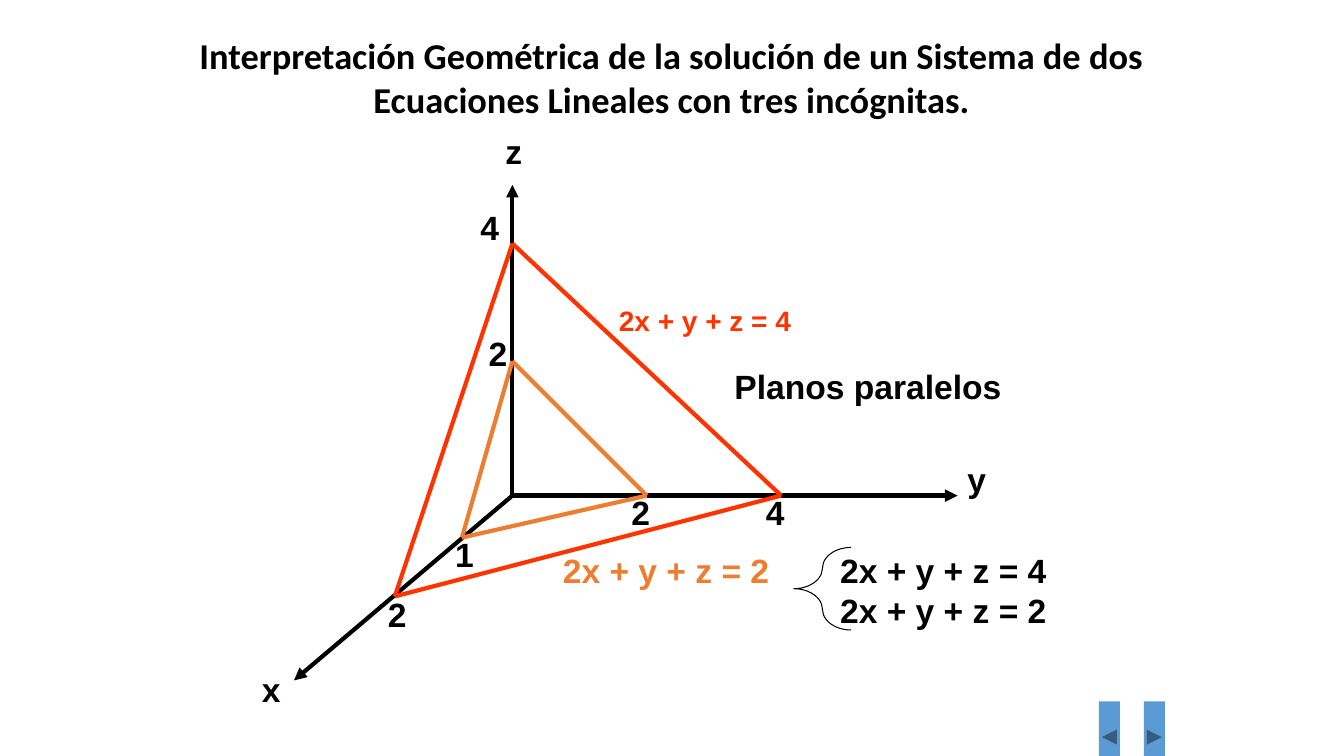
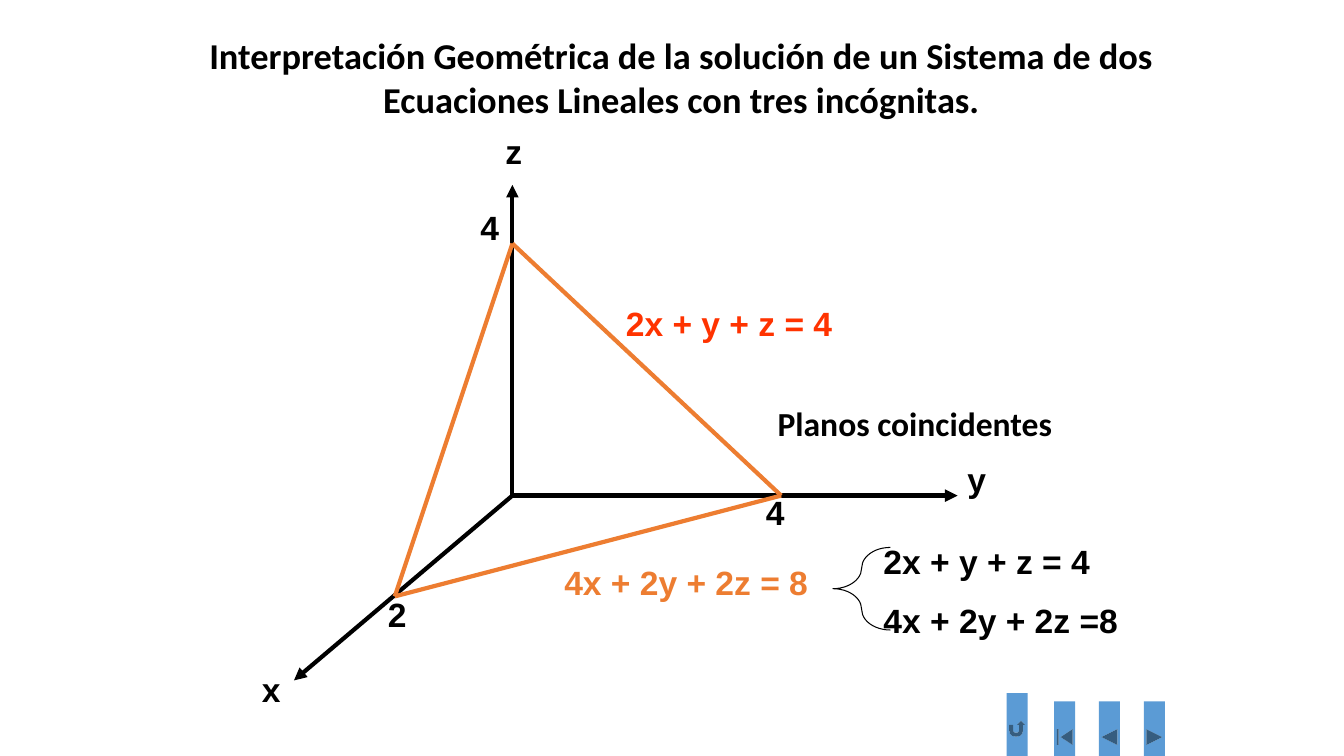
from pptx import Presentation
from pptx import util as u
from pptx.dml import color
from pptx.enum import shapes, text
from pptx.oxml.ns import qn
from lxml import etree

Pt = u.Pt
Kind = shapes.MSO_SHAPE
BLACK, RED, ORANGE, BLUE = "000000", "FF3300", "ED7D31", "5B9BD5"
LEFT, MID = text.PP_ALIGN.LEFT, text.PP_ALIGN.CENTER

TITLE = ("Interpretación Geométrica de la solución de un Sistema de dos "
         "Ecuaciones Lineales con tres incógnitas.")
ORIGIN = (366, 354)
AXES = [
    ("z", (366, 132), (354, 90)),
    ("y", (684, 354), (684, 324)),
    ("x", (210, 486), (180, 474)),
]
BIG = {
    "ends": [(366, 174), (558, 354), (282, 426)],
    "marks": [("4", (336, 144)), ("4", (540, 348)), ("2", (270, 421))],
}
SMALL = {
    "ends": [(366, 258), (462, 354), (330, 384)],
    "marks": [("2", (342, 234)), ("2", (444, 348)), ("1", (318, 378))],
}
NEXT = (Kind.ACTION_BUTTON_FORWARD_OR_NEXT, 817, 501)
BACK = (Kind.ACTION_BUTTON_BACK_OR_PREVIOUS, 785, 501)
FIRST = (Kind.ACTION_BUTTON_BEGINNING, 753, 501)
RETURN = (Kind.ACTION_BUTTON_RETURN, 719, 495)

SLIDES = [
    {
        "title": (120, 20, 720, 70),
        "planes": [(BIG, RED), (SMALL, ORANGE)],
        "notes": [
            (["2x + y + z = 4"], (435, 213, 228, 31), {"size": 20, "hue": RED}),
            (["2x + y + z = 2"], (395, 389, 252, 36), {"hue": ORANGE}),
            (["Planos paralelos"], (503, 258, 234, 36), {"align": MID}),
            (["2x + y + z = 4", "2x + y + z = 2"], (593, 389, 182, 65), {}),
        ],
        "brace": (567, 391, 41, 59),
        "buttons": [NEXT, BACK],
    },
    {
        "title": (134, 20, 706, 70),
        "planes": [(BIG, ORANGE)],
        "notes": [
            (["2x + y + z = 4"], (440, 213, 228, 36), {"hue": RED}),
            (["4x + 2y + 2z = 8"], (396, 398, 252, 36), {"hue": ORANGE}),
            (["Planos coincidentes"], (526, 284, 255, 36),
             {"font": "Calibri", "align": MID}),
            (["2x + y + z = 4", "4x + 2y + 2z =8"], (624, 383, 215, 80),
             {"gap": 13}),
        ],
        "brace": (595, 391, 41, 59),
        "buttons": [NEXT, BACK, FIRST, RETURN],
    },
]


def rgb(hue):
    return color.RGBColor.from_string(hue)


def put(obj, **vals):
    for key, val in vals.items():
        setattr(obj, key, val)


def write(frame, lines, size=24, hue=BLACK, font="Arial", align=LEFT, gap=0):
    put(frame, word_wrap=True, auto_size=text.MSO_AUTO_SIZE.NONE,
        vertical_anchor=text.MSO_ANCHOR.TOP)
    for i, line in enumerate(lines):
        para = frame.add_paragraph() if i else frame.paragraphs[0]
        para.text = line
        put(para, alignment=align, space_before=Pt(gap if i else 0))
        put(para.font, name=font, size=Pt(size), bold=True)
        para.font.color.rgb = rgb(hue)


def note(slide, lines, box, **style):
    area = slide.shapes.add_textbox(*map(Pt, box))
    write(area.text_frame, lines, **style)


def label(slide, word, spot):
    note(slide, [word], (*spot, 42, 36))


def link(slide, start, end, hue, arrow=False):
    line = slide.shapes.add_connector(
        shapes.MSO_CONNECTOR.STRAIGHT, *map(Pt, start + end))
    line.line.width = Pt(3)
    line.line.color.rgb = rgb(hue)
    if arrow:
        etree.SubElement(line.line._get_or_add_ln(), qn("a:tailEnd"),
                         type="triangle")
    etree.SubElement(line._element.spPr, qn("a:effectLst"))


def plane(slide, part, hue):
    ends = part["ends"]
    for start, end in zip(ends, ends[1:] + ends[:1]):
        link(slide, start, end, hue)
    for word, spot in part["marks"]:
        label(slide, word, spot)


def brace(slide, box):
    mark = slide.shapes.add_shape(Kind.LEFT_BRACE, *map(Pt, box))
    mark.shadow.inherit = False
    mark.adjustments[0] = 0.54
    mark.fill.background()
    mark.line.color.rgb = rgb(BLACK)
    mark.line.width = Pt(0.75)


def button(slide, kind, left, top):
    key = slide.shapes.add_shape(kind, *map(Pt, (left, top, 15, 51)))
    key.shadow.inherit = False
    key.fill.solid()
    key.fill.fore_color.rgb = rgb(BLUE)
    key.line.fill.background()


def build(deck, data):
    slide = deck.slides.add_slide(deck.slide_layouts[5])
    title = slide.shapes.title
    left, top, width, height = map(Pt, data["title"])
    put(title, left=left, top=top, width=width, height=height)
    write(title.text_frame, [TITLE], size=26, font="Calibri", align=MID)
    for name, end, spot in AXES:
        link(slide, ORIGIN, end, BLACK, arrow=True)
        label(slide, name, spot)
    for part, hue in data["planes"]:
        plane(slide, part, hue)
    for lines, box, style in data["notes"]:
        note(slide, lines, box, **style)
    brace(slide, data["brace"])
    for item in data["buttons"]:
        button(slide, *item)


def main():
    deck = Presentation()
    put(deck, slide_width=Pt(960), slide_height=Pt(540))
    for data in SLIDES:
        build(deck, data)
    deck.save("out.pptx")


if __name__ == "__main__":
    main()
